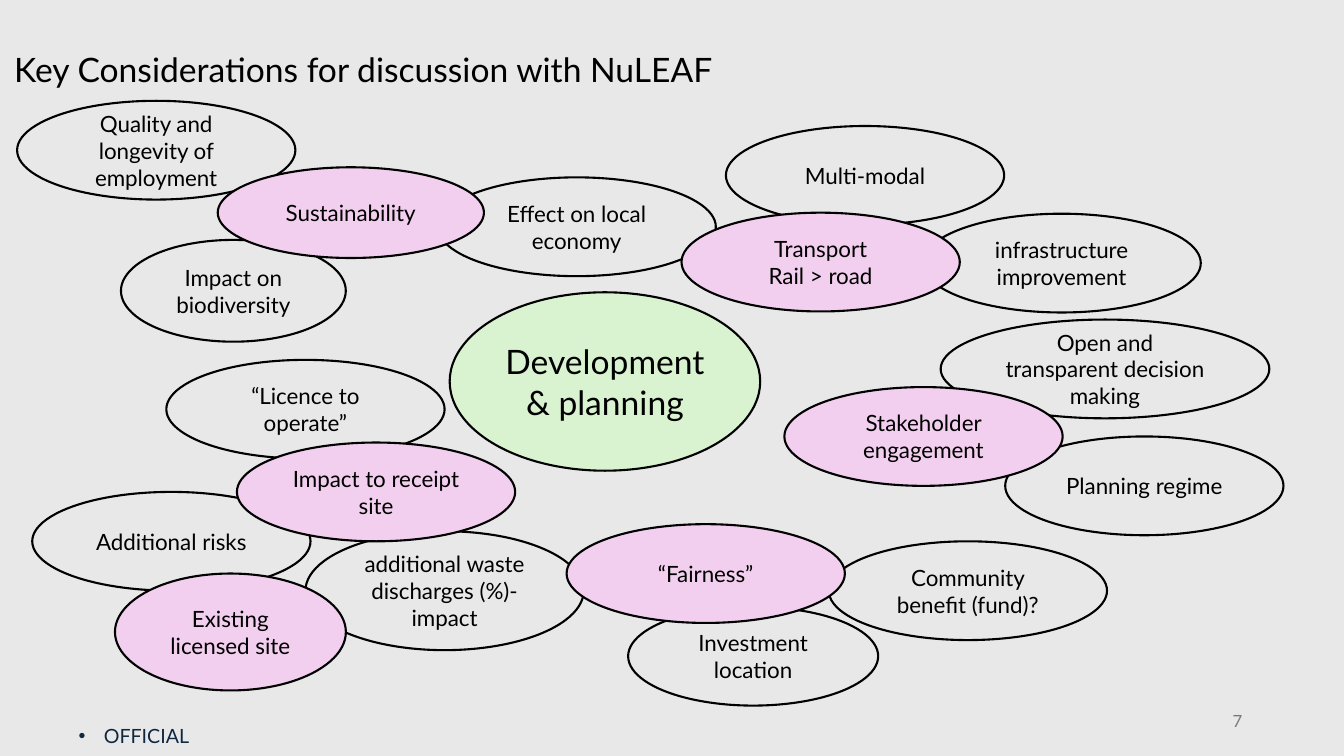
from lxml import etree
from pptx import Presentation
from pptx.dml.color import RGBColor
from pptx.enum import shapes, text
from pptx.oxml import ns
from pptx.util import Inches, Pt

COLOURS = {
    "background": "E8E8E8",
    "ink": "000000",
    "topic": "F2CFEE",
    "centre": "D9F2D0",
    "marking": "0E2841",
    "number": "797979",
}
OVAL = (2.76, 0.98)

# Topic: text, box, then ideas as (text, offset from the topic's corner, size)
CLUSTERS = [
    ("Sustainability", (2.16, 1.66, 2.64, 0.9), [
        ("Quality and longevity of employment", (-1.99, -0.66), OVAL),
        ("Effect on local economy", (2.18, 0.1), OVAL),
        ("Impact on biodiversity", (-0.96, 0.72), (2.23, 1.01)),
    ]),
    ("Transport\nRail > road", (6.76, 2.11, *OVAL), [
        ("Multi-modal", (0.44, -0.86), OVAL),
        ("infrastructure improvement", (2.39, 0.01), OVAL),
    ]),
    ("Stakeholder engagement", (7.78, 3.84, *OVAL), [
        ("Open and transparent decision making", (1.55, -0.67), (3.26, 0.98)),
        ("Planning regime", (2.19, 0.49), OVAL),
    ]),
    ("Impact to receipt site", (2.35, 4.39, *OVAL), [
        ("“Licence to operate”", (-0.7, -0.82), OVAL),
        ("Additional risks", (-2.03, 0.49), OVAL),
        ("additional waste discharges (%)- impact", (0.68, 0.88), (2.76, 1.18)),
    ]),
    ("Existing licensed site", (1.14, 5.69, 2.29, 1.16), []),
    ("“Fairness”", (5.62, 5.2, *OVAL), [
        ("Community benefit (fund)?", (2.6, 0.17), OVAL),
        ("Investment location", (0.61, 0.82), (2.48, 0.98)),
    ]),
]


def colour(name):
    """Return the named colour."""
    return RGBColor.from_string(COLOURS[name])


def style(paragraph, size, ink, align):
    """Set the font and alignment of a paragraph."""
    paragraph.alignment = align
    paragraph.font.name = "Lato"
    paragraph.font.size = Pt(size)
    paragraph.font.color.rgb = colour(ink)


def move(shape, box):
    """Place a shape in a box given in inches."""
    shape.left, shape.top, shape.width, shape.height = map(Inches, box)


def add_oval(slide, words, box, fill=None, size=16):
    """Draw an outlined oval with centred text."""
    oval = slide.shapes.add_shape(shapes.MSO_SHAPE.OVAL, *map(Inches, box))
    oval.shadow.inherit = False
    if fill:
        oval.fill.solid()
        oval.fill.fore_color.rgb = colour(fill)
    else:
        oval.fill.background()
    oval.line.color.rgb = colour("ink")
    oval.line.width = Pt(1.5)
    frame = oval.text_frame
    frame.word_wrap = True
    frame.vertical_anchor = text.MSO_ANCHOR.MIDDLE
    frame.text = words
    for paragraph in frame.paragraphs:
        style(paragraph, size, "ink", text.PP_ALIGN.CENTER)


def add_cluster(slide, topic, box, ideas):
    """Draw the ideas around a topic, then the topic over them."""
    left, top = box[:2]
    for words, (across, down), size in ideas:
        add_oval(slide, words, (left + across, top + down, *size))
    add_oval(slide, topic, box, "topic")


def fill_title(slide, box):
    """Fill and place the title."""
    title = slide.shapes.title
    move(title, box)
    frame = title.text_frame
    frame.text = "Key Considerations for discussion with NuLEAF"
    frame.auto_size = text.MSO_AUTO_SIZE.NONE
    frame.vertical_anchor = text.MSO_ANCHOR.MIDDLE
    paragraph = frame.paragraphs[0]
    paragraph.line_spacing = 0.9
    style(paragraph, 24, "ink", text.PP_ALIGN.LEFT)


def fill_marking(slide, box):
    """Fill and place the bulleted marking at the foot."""
    body = slide.placeholders[1]
    move(body, box)
    frame = body.text_frame
    frame.text = "OFFICIAL"
    frame.auto_size = text.MSO_AUTO_SIZE.NONE
    frame.vertical_anchor = text.MSO_ANCHOR.TOP
    paragraph = frame.paragraphs[0]
    paragraph.line_spacing = 0.9
    paragraph.space_before = Pt(0)
    properties = paragraph._p.get_or_add_pPr()
    properties.set("marL", str(Inches(0.25)))
    properties.set("indent", str(Inches(-0.25)))
    etree.SubElement(properties, ns.qn("a:buFont"), typeface="Arial")
    etree.SubElement(properties, ns.qn("a:buChar"), char="•")
    style(paragraph, 14, "marking", text.PP_ALIGN.LEFT)


def add_number(slide, box):
    """Write the page number."""
    frame = slide.shapes.add_textbox(*map(Inches, box)).text_frame
    frame.word_wrap = True
    frame.vertical_anchor = text.MSO_ANCHOR.MIDDLE
    frame.text = "7"
    style(frame.paragraphs[0], 12, "number", text.PP_ALIGN.RIGHT)


def main():
    """Build and save the slide."""
    presentation = Presentation()
    presentation.slide_width = Inches(13.33)
    presentation.slide_height = Inches(7.5)
    slide = presentation.slides.add_slide(presentation.slide_layouts[1])
    slide.background.fill.solid()
    slide.background.fill.fore_color.rgb = colour("background")
    fill_title(slide, (0.04, -0.01, 11.5, 1.45))
    for cluster in CLUSTERS:
        add_cluster(slide, *cluster)
    add_oval(slide, "Development & planning", (4.46, 2.9, 3.08, 1.77), "centre", 24)
    fill_marking(slide, (0.68, 7.16, 12.28, 0.15))
    add_number(slide, (9.42, 6.95, 3, 0.4))
    presentation.save("out.pptx")


if __name__ == "__main__":
    main()
